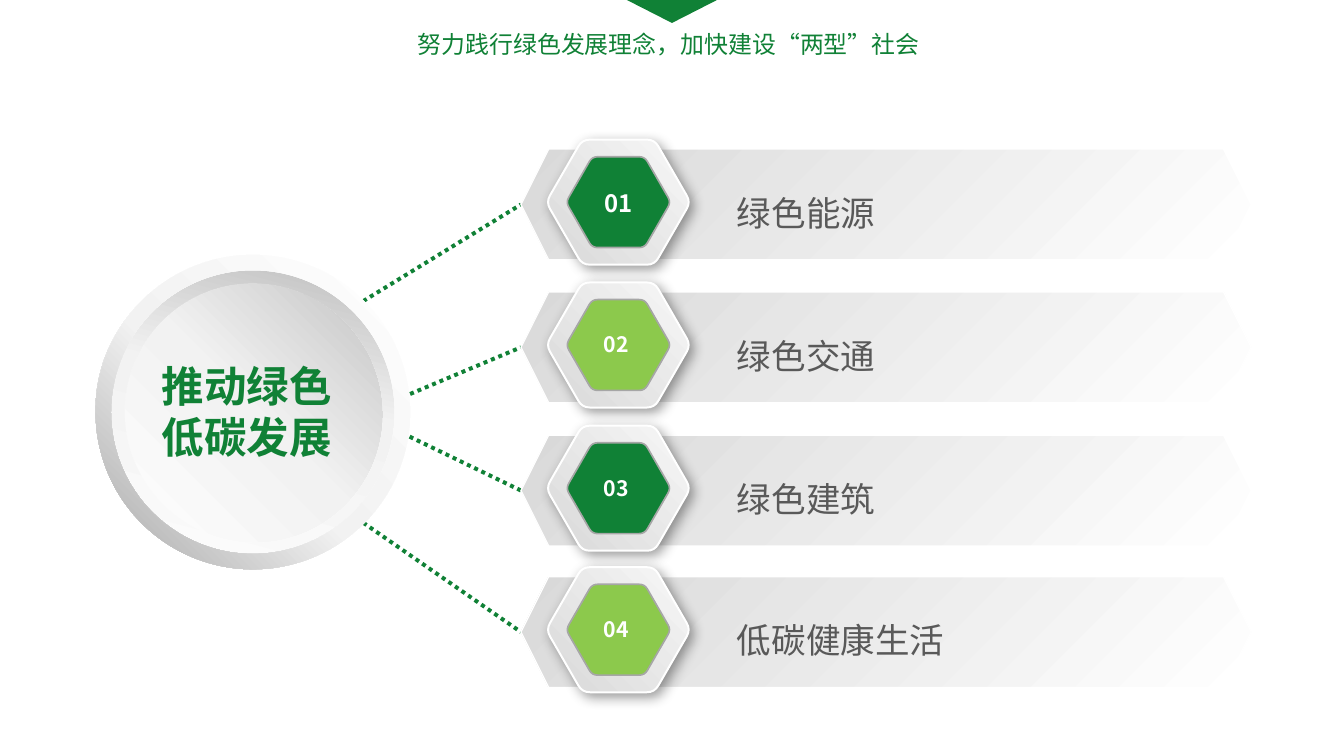
import math
from dataclasses import dataclass

import lxml.etree
import pptx
import pptx.dml.color
import pptx.enum.dml
import pptx.enum.shapes
import pptx.enum.text
import pptx.oxml.ns
import pptx.util

Pt = pptx.util.Pt
RGBColor = pptx.dml.color.RGBColor
SHAPE = pptx.enum.shapes.MSO_SHAPE
ALIGN = pptx.enum.text.PP_ALIGN
ANCHOR = pptx.enum.text.MSO_ANCHOR
qn = pptx.oxml.ns.qn

GREEN = RGBColor(0x10, 0x81, 0x36)
LIME = RGBColor(0x8C, 0xC9, 0x4C)
WHITE = RGBColor(0xFF, 0xFF, 0xFF)
NEAR_WHITE = RGBColor(0xF7, 0xF7, 0xF7)
PALE = RGBColor(0xF2, 0xF2, 0xF2)
SILVER = RGBColor(0xD9, 0xD9, 0xD9)
GREY = RGBColor(0xBF, 0xBF, 0xBF)
DARK_GREY = RGBColor(0xA6, 0xA6, 0xA6)
TEXT_GREY = RGBColor(0x59, 0x59, 0x59)

CJK_FONT = "Noto Sans CJK SC"
TITLE_FONT = "Arial Narrow"

BAND_LEFT, BAND_WIDTH, BAND_HEIGHT = 392.4, 550, 83.5
BADGE_X = 465.8
CORNER_CUT = 0.106  # share of a hexagon side taken by each rounded corner


@dataclass
class Gradient:
    stops: list[tuple[int, RGBColor]]
    angle: int  # clockwise degrees


@dataclass
class Topic:
    number: str
    label: str
    color: RGBColor
    top: float
    number_size: int
    number_width: float
    line_start: tuple[float, float]


@dataclass
class Text:
    content: str
    size: int
    color: RGBColor
    font: str = CJK_FONT
    bold: bool = False
    align: ALIGN = ALIGN.CENTER
    anchor: ANCHOR = ANCHOR.TOP
    spacing: float = 1.0
    wrap: bool = True
    margins: tuple[float, float] = (7.9, 3.6)


RING = Gradient([(0, WHITE), (55, PALE), (100, DARK_GREY)], 135)
DISC = Gradient([(0, WHITE), (51, PALE), (100, GREY)], 315)
BAND = Gradient([(0, WHITE), (100, SILVER)], 225)
BADGE = Gradient([(0, NEAR_WHITE), (100, SILVER)], 135)

TOPICS = [
    Topic("01", "绿色能源", GREEN, 112.3, 18, 43.2, (273.6, 226.8)),
    Topic("02", "绿色交通", LIME, 219.9, 16, 40.3, (292.3, 303.8)),
    Topic("03", "绿色建筑", GREEN, 327.8, 16, 40.3, (292.3, 321.1)),
    Topic("04", "低碳健康生活", LIME, 434.4, 16, 40.3, (273.6, 393.8)),
]


def paint(shape, fill: RGBColor | Gradient) -> None:
    shape.shadow.inherit = False
    if isinstance(fill, Gradient):
        shape.fill.gradient()
        shape.fill.gradient_angle = 360 - fill.angle
        stop_list = next(shape._element.spPr.iter(qn("a:gsLst")))
        stop_list.clear()
        for position, color in fill.stops:
            stop = lxml.etree.SubElement(stop_list, qn("a:gs"), pos=str(position * 1000))
            lxml.etree.SubElement(stop, qn("a:srgbClr"), val=str(color))
    else:
        shape.fill.solid()
        shape.fill.fore_color.rgb = fill


def outline(shape, color: RGBColor, width: float) -> None:
    shape.line.color.rgb = color
    shape.line.width = Pt(width)


def add_preset(slide, kind: SHAPE, left: float, top: float, width: float, height: float,
               fill: RGBColor | Gradient, rotation: float = 0):
    shape = slide.shapes.add_shape(kind, Pt(left), Pt(top), Pt(width), Pt(height))
    paint(shape, fill)
    shape.line.fill.background()
    shape.rotation = rotation
    if kind == SHAPE.DONUT:
        shape.adjustments[0] = 0.049
    return shape


def write(shape, text: Text) -> None:
    text_frame = shape.text_frame
    text_frame.word_wrap = text.wrap
    text_frame.vertical_anchor = text.anchor
    text_frame.margin_left = text_frame.margin_right = Pt(text.margins[0])
    text_frame.margin_top = text_frame.margin_bottom = Pt(text.margins[1])
    text_frame.text = text.content
    paragraph = text_frame.paragraphs[0]
    paragraph.alignment = text.align
    paragraph.line_spacing = text.spacing
    font = paragraph.runs[0].font
    font.size, font.bold, font.name = Pt(text.size), text.bold, text.font
    font.color.rgb = text.color
    lxml.etree.SubElement(font._element, qn("a:ea"), typeface=CJK_FONT)


def add_text(slide, left: float, top: float, width: float, height: float, text: Text) -> None:
    write(slide.shapes.add_textbox(Pt(left), Pt(top), Pt(width), Pt(height)), text)


def add_label(slide, left: float, top: float, width: float, height: float, text: Text) -> None:
    shape = slide.shapes.add_shape(SHAPE.ROUNDED_RECTANGLE, Pt(left), Pt(top), Pt(width), Pt(height))
    shape.adjustments[0] = 0
    shape.shadow.inherit = False
    shape.fill.background()
    shape.line.fill.background()
    write(shape, text)


def add_rounded_hexagon(slide, center_y: float, side: float, fill: RGBColor | Gradient):
    corners = [(BADGE_X + side * math.cos(math.radians(60 * i)),
                center_y + side * math.sin(math.radians(60 * i))) for i in range(6)]
    points = []
    for i, corner in enumerate(corners):
        before, after = corners[i - 1], corners[(i + 1) % 6]
        for neighbour, share in ((before, 1), (before, 1 / 3), (after, 1 / 3), (after, 1)):
            points.append(tuple(Pt(c + CORNER_CUT * share * (n - c))
                                for c, n in zip(corner, neighbour)))
    builder = slide.shapes.build_freeform(*points[0])
    builder.add_line_segments(points[1:], close=True)
    shape = builder.convert_to_shape()

    # Turn the three segments of each corner into one curve
    segments = list(shape._element.spPr.iter(qn("a:lnTo")))
    for i in range(0, len(segments), 4):
        curve = lxml.etree.Element(qn("a:cubicBezTo"))
        segments[i].addprevious(curve)
        for segment in segments[i:i + 3]:
            curve.append(segment[0])
            segment.getparent().remove(segment)
    paint(shape, fill)
    return shape


def add_drop_shadow(shape) -> None:
    effects = shape._element.spPr.find(qn("a:effectLst"))
    shadow = lxml.etree.SubElement(
        effects, qn("a:outerShdw"), blurRad=str(Pt(10)), dist=str(Pt(4)),
        dir=str(45 * 60000), algn="tl", rotWithShape="0")
    color = lxml.etree.SubElement(shadow, qn("a:srgbClr"), val="000000")
    lxml.etree.SubElement(color, qn("a:alpha"), val="40000")


def add_dotted_line(slide, start: tuple[float, float], end: tuple[float, float]) -> None:
    connector = slide.shapes.add_connector(
        pptx.enum.shapes.MSO_CONNECTOR.STRAIGHT, *map(Pt, start + end))
    outline(connector, GREEN, 3)
    connector.line.dash_style = pptx.enum.dml.MSO_LINE.ROUND_DOT
    lxml.etree.SubElement(connector._element.spPr, qn("a:effectLst"))


def add_topic(slide, topic: Topic) -> None:
    top = topic.top
    add_dotted_line(slide, topic.line_start, (BAND_LEFT, top + BAND_HEIGHT / 2))
    band = add_preset(slide, SHAPE.HEXAGON, BAND_LEFT, top, BAND_WIDTH, BAND_HEIGHT, BAND)
    outline(band, WHITE, 1)
    badge = add_rounded_hexagon(slide, top + 40, 54.4, BADGE)
    outline(badge, WHITE, 1.5)
    add_drop_shadow(badge)
    core = add_rounded_hexagon(slide, top + 40, 39.5, topic.color)
    outline(core, DARK_GREY, 1.25)
    add_text(slide, 444.2, top + 25, topic.number_width, 30,
             Text(topic.number, topic.number_size, WHITE, bold=True, wrap=False, margins=(10, 5)))
    add_label(slide, 547.2, top + 13.2, 339.8, 59.8,
              Text(topic.label, 26, TEXT_GREY, align=ALIGN.JUSTIFY, anchor=ANCHOR.MIDDLE, spacing=1.3))


def main() -> None:
    presentation = pptx.Presentation()
    presentation.slide_width, presentation.slide_height = Pt(1012.3), Pt(569.5)
    slide = presentation.slides.add_slide(presentation.slide_layouts[6])
    # Header
    add_preset(slide, SHAPE.ISOSCELES_TRIANGLE, 469.4, -1.4, 73.4, 18.7, GREEN, 180)
    add_text(slide, 217.4, 18.7, 572.4, 28.8,
             Text("努力践行绿色发展理念，加快建设“两型”社会", 18, GREEN))
    # Disc behind the title
    add_preset(slide, SHAPE.DONUT, 72, 195.8, 225.4, 225.4, RING)
    add_preset(slide, SHAPE.OVAL, 77, 200.9, 215.3, 215.3, DISC)
    # Topic rows
    for topic in TOPICS:
        add_topic(slide, topic)
    # Rims and title
    add_preset(slide, SHAPE.DONUT, 83.5, 202.3, 215.3, 217.4, RING, 150)
    add_preset(slide, SHAPE.DONUT, 72, 192, 236.9, 236.9, RING)
    add_text(slide, 109.4, 267.8, 153.4, 85,
             Text("推动绿色低碳发展", 32, GREEN, font=TITLE_FONT, bold=True))
    presentation.save("out.pptx")


if __name__ == "__main__":
    main()
